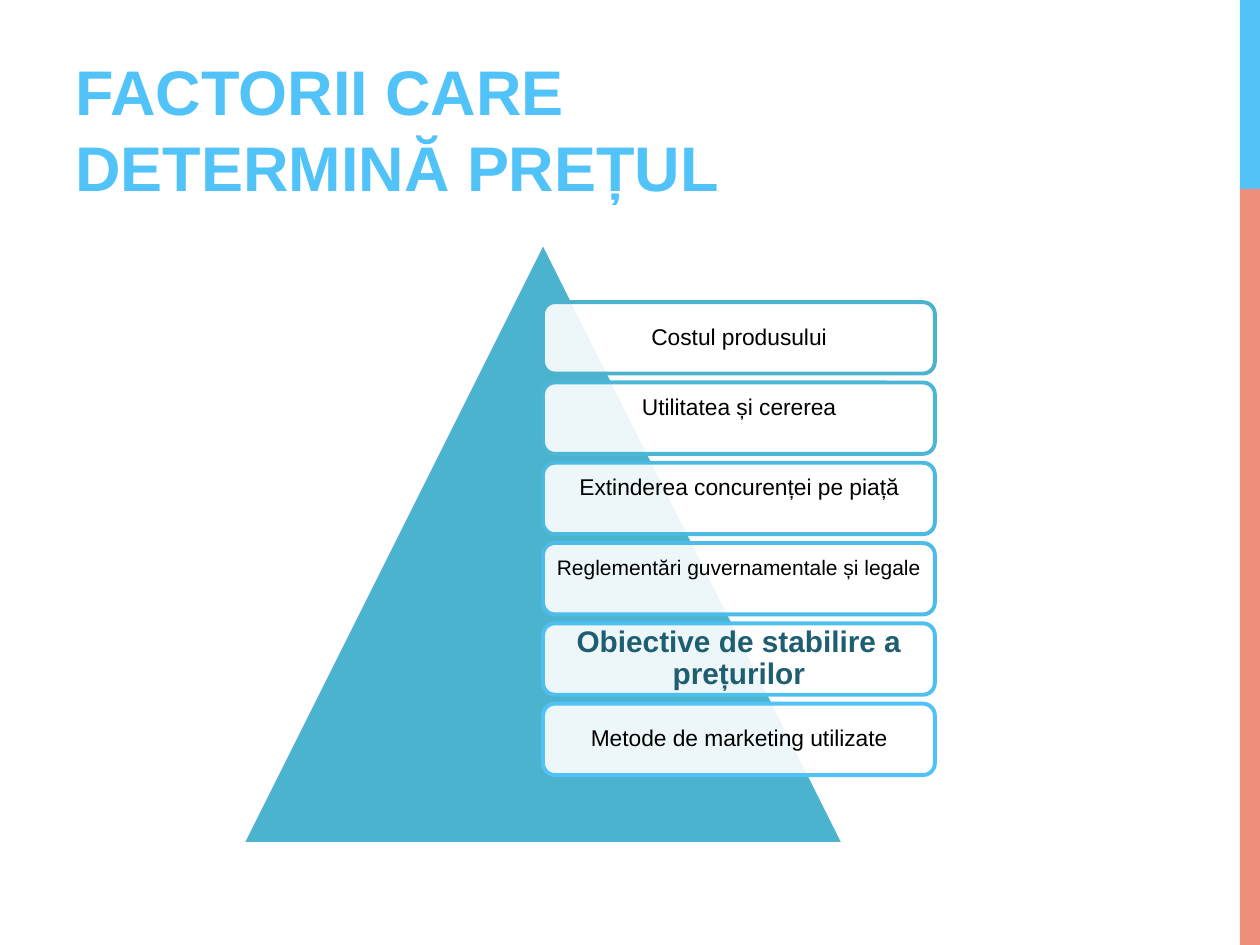
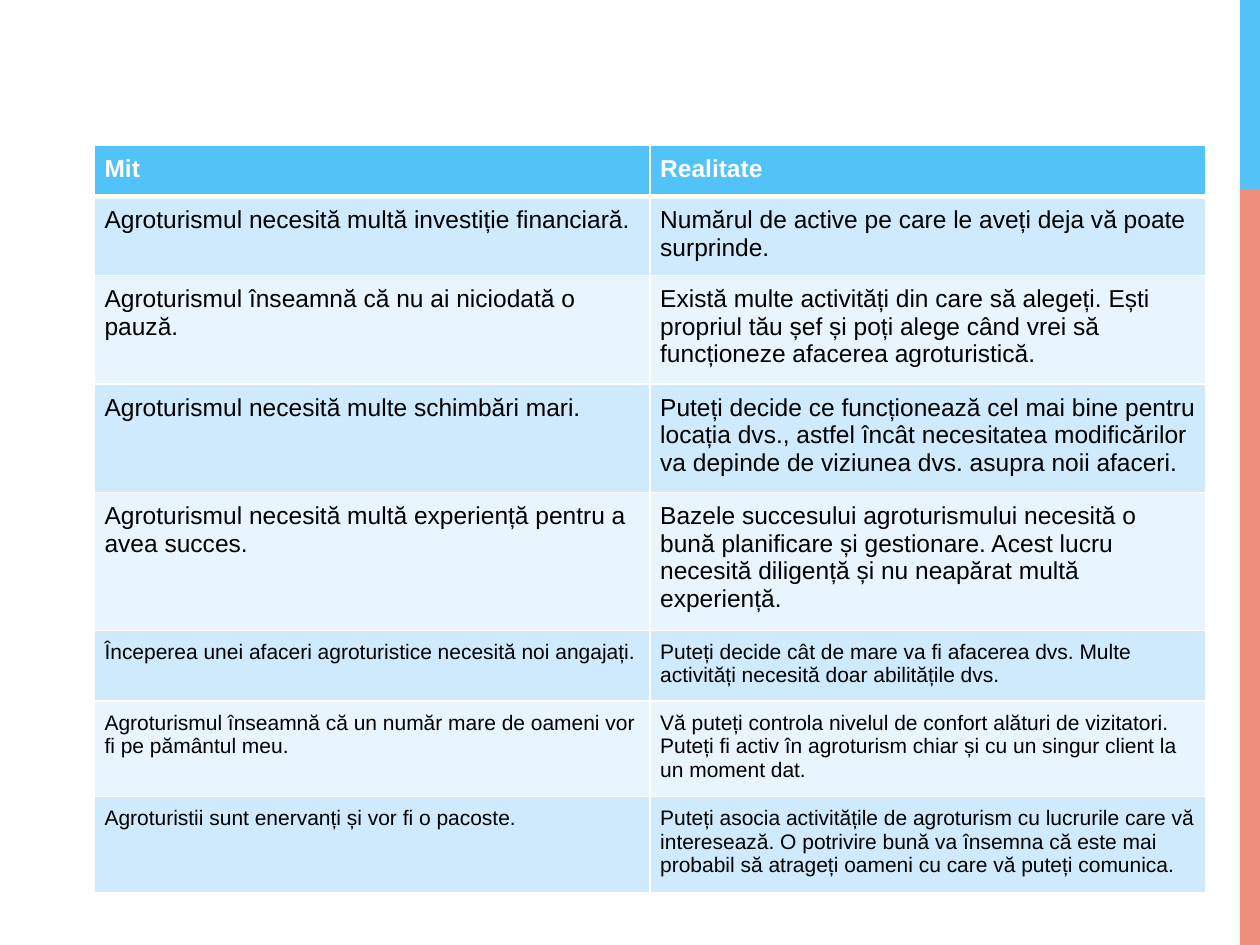
from collections import namedtuple

from lxml.etree import SubElement
from pptx import Presentation
from pptx.dml.color import RGBColor
from pptx.enum.shapes import MSO_SHAPE as Shape
from pptx.enum.text import MSO_ANCHOR as Anchor, PP_ALIGN as Align
from pptx.oxml import parse_xml
from pptx.oxml.ns import nsdecls, qn
from pptx.util import Inches, Pt

COLUMNS, ROWS = 100, 75
SLIDE_WIDTH, SLIDE_HEIGHT = Inches(10), Inches(7.5)
FONT = "Arial"
COLORS = {
    "accent": "51C3F9",
    "coral": "EF8E7B",
    "teal": "4CB3CE",
    "deep_teal": "1E5E70",
    "band_dark": "CFE9FD",
    "band_light": "E8F4FE",
    "white": "FFFFFF",
    "black": "000000",
    "factor_1": "4CB3CE",
    "factor_2": "4CB6D7",
    "factor_3": "4CB9E0",
    "factor_4": "4DBCE8",
    "factor_5": "4EC0F0",
    "factor_6": "50C2F7",
}

Box = namedtuple("Box", "left top width height")
SIDE_BAND = Box(98.4, 0, 1.6, ROWS)
TITLE = Box(5, 1.7, 63.3, 15)
PYRAMID = Box(19.2, 19.2, 55, 47.8)
MYTHS = Box(7.5, 11.5, 88.2, 32.8)

LIFT = 0.19
FACTORS = [
    ("Costul produsului", {"line_spacing": 0.9}),
    ("Utilitatea și cererea", {"lift": LIFT}),
    ("Extinderea concurenței pe piață", {"lift": LIFT}),
    ("Reglementări guvernamentale și legale", {"lift": LIFT, "size": 12}),
    ("Obiective de stabilire a prețurilor",
     {"line_spacing": 0.9, "size": 17, "bold": True,
      "color": "deep_teal", "inset": 0.07}),
    ("Metode de marketing utilizate", {"line_spacing": 0.9}),
]

MYTH_ROWS = [
    ("Mit", "Realitate"),
    ("Agroturismul necesită multă investiție financiară.",
     "Numărul de active pe care le aveți deja vă poate surprinde."),
    ("Agroturismul înseamnă că nu ai niciodată o pauză.",
     "Există multe activități din care să alegeți. Ești propriul tău șef "
     "și poți alege când vrei să funcționeze afacerea agroturistică."),
    ("Agroturismul necesită multe schimbări mari.",
     "Puteți decide ce funcționează cel mai bine pentru locația dvs., astfel "
     "încât necesitatea modificărilor va depinde de viziunea dvs. asupra "
     "noii afaceri."),
    ("Agroturismul necesită multă experiență pentru a avea succes.",
     "Bazele succesului agroturismului necesită o bună planificare și "
     "gestionare. Acest lucru necesită diligență și nu neapărat multă "
     "experiență."),
    ("Începerea unei afaceri agroturistice necesită noi angajați.",
     "Puteți decide cât de mare va fi afacerea dvs. Multe activități "
     "necesită doar abilitățile dvs."),
    ("Agroturismul înseamnă că un număr mare de oameni vor fi pe pământul meu.",
     "Vă puteți controla nivelul de confort alături de vizitatori. Puteți fi "
     "activ în agroturism chiar și cu un singur client la un moment dat."),
    ("Agroturistii sunt enervanți și vor fi o pacoste.",
     "Puteți asocia activitățile de agroturism cu lucrurile care vă "
     "interesează. O potrivire bună va însemna că este mai probabil să "
     "atrageți oameni cu care vă puteți comunica."),
]
FIRST_SMALL_ROW = 5


def rgb(name):
    return RGBColor.from_string(COLORS[name])


def to_emu(box):
    column, row = SLIDE_WIDTH / COLUMNS, SLIDE_HEIGHT / ROWS
    return [round(length * unit)
            for length, unit in zip(box, (column, row, column, row))]


def write_text(frame, text, size=13, color="black", bold=False,
               align=Align.LEFT, line_spacing=1.0, anchor=Anchor.TOP,
               inset=0.05, side_inset=None, lift=0):
    side = Inches(inset if side_inset is None else side_inset)
    frame.word_wrap = True
    frame.vertical_anchor = anchor
    frame.margin_left = frame.margin_right = side
    frame.margin_top = Inches(inset)
    frame.margin_bottom = Inches(inset + lift)
    paragraph = frame.paragraphs[0]
    paragraph.alignment = align
    paragraph.line_spacing = line_spacing
    run = paragraph.add_run()
    run.text = text
    run.font.name = FONT
    run.font.size = Pt(size)
    run.font.bold = bold
    run.font.color.rgb = rgb(color)


def add_block(slide, kind, box, fill, line=None, opacity=None):
    shape = slide.shapes.add_shape(kind, *to_emu(box))
    shape.shadow.inherit = False
    shape.fill.solid()
    shape.fill.fore_color.rgb = rgb(fill)
    if opacity is not None:
        color = shape.fill._xPr.find(qn("a:solidFill"))[0]
        SubElement(color, qn("a:alpha"), val=str(opacity * 1000))
    if line:
        shape.line.color.rgb = rgb(line)
        shape.line.width = Pt(2.25)
    else:
        shape.line.fill.background()
    return shape


def draw_side_band(slide, box):
    split = box.height / 5
    add_block(slide, Shape.RECTANGLE, box._replace(height=split), "accent")
    add_block(slide, Shape.RECTANGLE,
              box._replace(top=box.top + split, height=box.height - split),
              "coral")


def draw_title(slide, box, text):
    title = slide.shapes.add_textbox(*to_emu(box))
    write_text(title.text_frame, text, size=36, color="accent", bold=True,
               anchor=Anchor.BOTTOM, side_inset=0.1)


def draw_pyramid(slide, box, factors):
    side = box.height
    add_block(slide, Shape.ISOSCELES_TRIANGLE, box._replace(width=side),
              "teal", line="white")
    pitch = side * 0.8 / len(factors)
    for index, (text, text_format) in enumerate(factors):
        factor_box = Box(box.left + side / 2,
                         box.top + side / 10 + index * pitch,
                         box.width - side / 2, pitch * 8 / 9)
        factor = add_block(slide, Shape.ROUNDED_RECTANGLE, factor_box, "white",
                           line=f"factor_{index + 1}", opacity=90)
        write_text(factor.text_frame, text, align=Align.CENTER,
                   anchor=Anchor.MIDDLE, **text_format)


def set_borders(cell, **widths):
    properties = cell._tc.get_or_add_tcPr()
    for position, side in enumerate("LRTB"):
        properties.insert(position, parse_xml(
            f'<a:ln{side} {nsdecls("a")} w="{Pt(widths.get(side, 1))}">'
            f'<a:solidFill><a:srgbClr val="{COLORS["white"]}"/></a:solidFill>'
            f'</a:ln{side}>'))


def draw_myth_table(slide, box, rows):
    table = slide.shapes.add_table(len(rows), len(rows[0]), *to_emu(box)).table
    table.horz_banding = False
    for row_index, texts in enumerate(rows):
        header = row_index == 0
        band = "band_dark" if row_index % 2 else "band_light"
        for column_index, text in enumerate(texts):
            cell = table.cell(row_index, column_index)
            cell.fill.solid()
            cell.fill.fore_color.rgb = rgb("accent" if header else band)
            set_borders(cell, B=3 if header else 1,
                        T=3 if row_index == 1 else 1)
            write_text(cell.text_frame, text, bold=header,
                       size=14 if row_index < FIRST_SMALL_ROW else 12,
                       color="white" if header else "black")
            cell.margin_left = cell.margin_right = Inches(0.08)
            cell.margin_top = cell.margin_bottom = Inches(0.08)
            cell.vertical_anchor = Anchor.TOP


def add_slide(presentation):
    slide = presentation.slides.add_slide(presentation.slide_layouts[6])
    draw_side_band(slide, SIDE_BAND)
    return slide


def main():
    presentation = Presentation()
    presentation.slide_width = SLIDE_WIDTH
    presentation.slide_height = SLIDE_HEIGHT

    factors_slide = add_slide(presentation)
    draw_title(factors_slide, TITLE, "FACTORII CARE DETERMINĂ PREȚUL")
    draw_pyramid(factors_slide, PYRAMID, FACTORS)

    myths_slide = add_slide(presentation)
    draw_myth_table(myths_slide, MYTHS, MYTH_ROWS)

    presentation.save("out.pptx")


if __name__ == "__main__":
    main()
